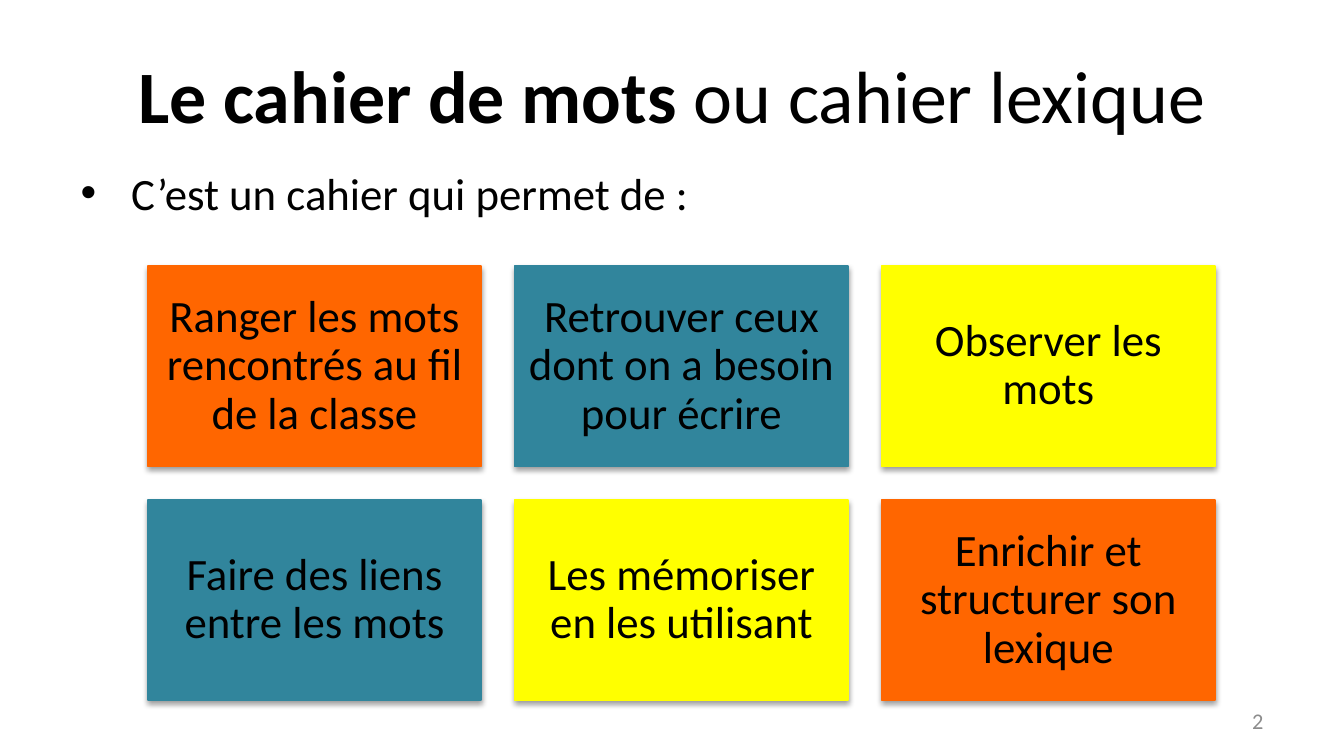
from dataclasses import dataclass

from lxml import etree
from pptx import Presentation
from pptx.dml.color import RGBColor
from pptx.enum.shapes import MSO_SHAPE
from pptx.enum.text import MSO_ANCHOR, MSO_AUTO_SIZE, PP_ALIGN
from pptx.oxml.ns import qn
from pptx.util import Pt

RECTANGLE = MSO_SHAPE.RECTANGLE
MIDDLE, TOP = MSO_ANCHOR.MIDDLE, MSO_ANCHOR.TOP
LEFT, CENTER, RIGHT = PP_ALIGN.LEFT, PP_ALIGN.CENTER, PP_ALIGN.RIGHT
NO_AUTOFIT = MSO_AUTO_SIZE.NONE

COLORS = {
    "text": "000000",
    "number": "8C8C8C",
    "orange": "FF6600",
    "teal": "31859C",
    "yellow": "FFFF00",
}
FONT = "Calibri"
COLUMNS = 3
GRID_LEFT, GRID_TOP = 79.2, 142.56
CARD_WIDTH, CARD_HEIGHT, GAP = 178.56, 107.28, 18


@dataclass(frozen=True)
class Purpose:
    text: str
    color: str


PURPOSES = [
    Purpose("Ranger les mots rencontrés au fil de la classe", "orange"),
    Purpose("Retrouver ceux dont on a besoin pour écrire", "teal"),
    Purpose("Observer les mots", "yellow"),
    Purpose("Faire des liens entre les mots", "teal"),
    Purpose("Les mémoriser en les utilisant", "yellow"),
    Purpose("Enrichir et structurer son lexique", "orange"),
]


def rgb(name: str) -> RGBColor:
    return RGBColor.from_string(COLORS[name])


def write(shape, text: str, *, size: float = 24, color: str = "text",
          bold_part: str = "", align=CENTER, anchor=MIDDLE,
          line_spacing: float | None = None) -> None:
    frame = shape.text_frame
    frame.word_wrap = True
    frame.auto_size = NO_AUTOFIT
    frame.vertical_anchor = anchor
    paragraph = frame.paragraphs[0]
    paragraph.alignment = align
    paragraph.line_spacing = line_spacing
    for part, bold in ((bold_part, True), (text, False)):
        if part:
            run = paragraph.add_run()
            run.text = part
            run.font.name = FONT
            run.font.size = Pt(size)
            run.font.bold = bold
            run.font.color.rgb = rgb(color)


def place(shape, left: float, top: float, width: float, height: float) -> None:
    shape.left, shape.top = Pt(left), Pt(top)
    shape.width, shape.height = Pt(width), Pt(height)


def add_shadow(shape) -> None:
    shape.shadow.inherit = False
    effects = shape._element.spPr.find(qn("a:effectLst"))
    shadow = etree.SubElement(
        effects, qn("a:outerShdw"), blurRad=str(Pt(3.1)), dist=str(Pt(1.6)),
        dir="5400000", rotWithShape="0")
    tint = etree.SubElement(shadow, qn("a:srgbClr"), val="000000")
    etree.SubElement(tint, qn("a:alpha"), val="38000")


def draw_card(slide, purpose: Purpose, index: int) -> None:
    row, column = divmod(index, COLUMNS)
    card = slide.shapes.add_shape(
        RECTANGLE,
        Pt(GRID_LEFT + column * (CARD_WIDTH + GAP)),
        Pt(GRID_TOP + row * (CARD_HEIGHT + GAP)),
        Pt(CARD_WIDTH), Pt(CARD_HEIGHT))
    card.fill.solid()
    card.fill.fore_color.rgb = rgb(purpose.color)
    card.line.color.rgb = rgb(purpose.color)
    card.line.width = Pt(0.75)
    add_shadow(card)
    write(card, purpose.text, line_spacing=0.9)
    frame = card.text_frame
    frame.margin_left = frame.margin_right = Pt(7.2)
    frame.margin_top = frame.margin_bottom = Pt(7.2)


def main() -> None:
    deck = Presentation()
    deck.slide_width, deck.slide_height = Pt(720), Pt(405)
    slide = deck.slides.add_slide(deck.slide_layouts[1])

    title = slide.shapes.title
    place(title, 36, 16.56, 648, 67.68)
    write(title, "ou cahier lexique", bold_part="Le cahier de mots ", size=39.6)

    intro = slide.placeholders[1]
    place(intro, 36, 84.96, 604.08, 29.52)
    write(intro, "C’est un cahier qui permet de :", align=LEFT, anchor=TOP)

    for index, purpose in enumerate(PURPOSES):
        draw_card(slide, purpose, index)

    page_number = slide.shapes.add_textbox(Pt(516.24), Pt(375.12), Pt(167.76), Pt(21.6))
    write(page_number, "2", size=12, color="number", align=RIGHT)

    deck.save("out.pptx")


if __name__ == "__main__":
    main()
